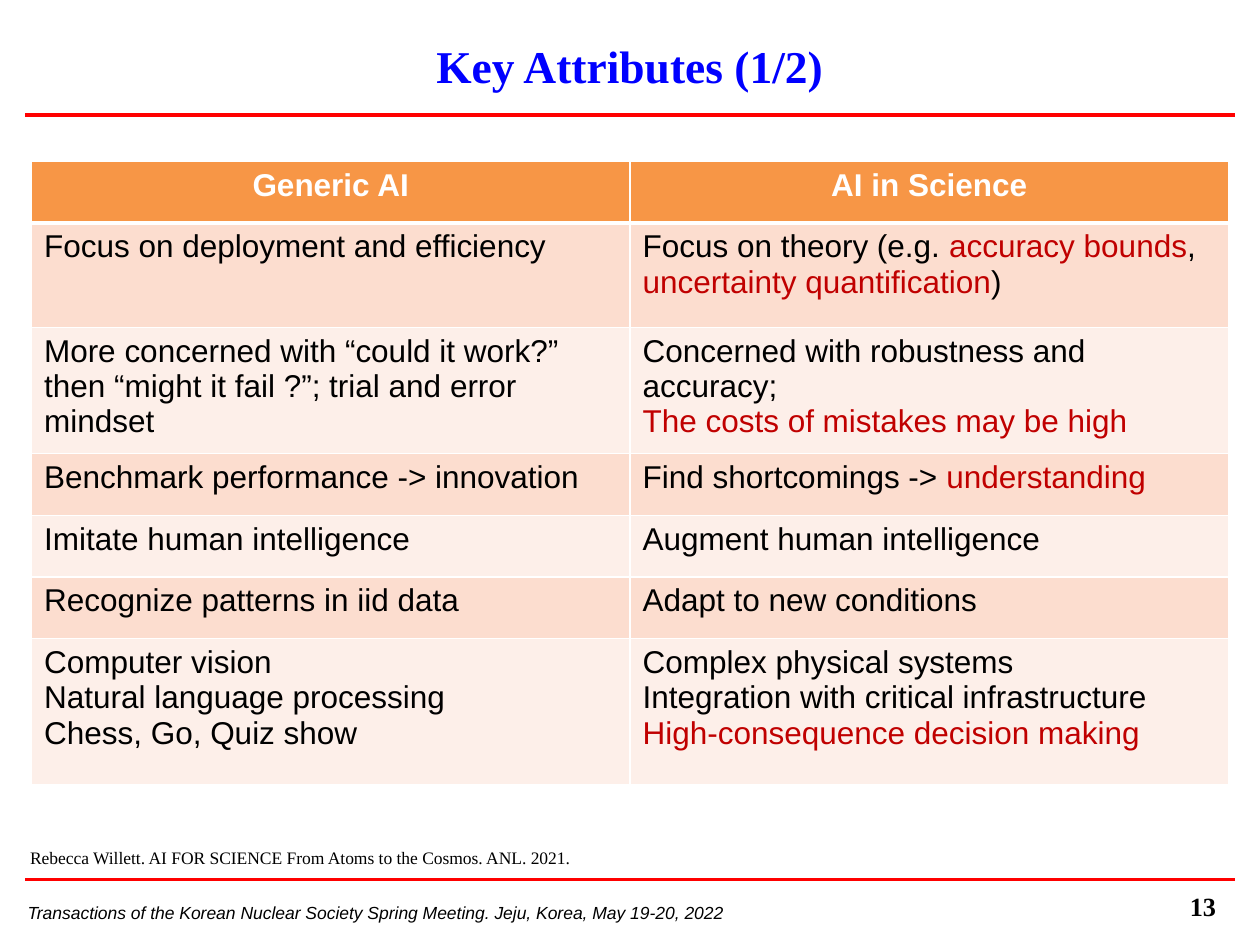
from dataclasses import dataclass

from lxml import etree
from pptx import Presentation
from pptx.dml.color import RGBColor
from pptx.enum.shapes import MSO_CONNECTOR
from pptx.enum.text import MSO_ANCHOR, PP_ALIGN
from pptx.oxml.ns import qn
from pptx.util import Inches, Pt

LEFT, CENTER, RIGHT = PP_ALIGN.LEFT, PP_ALIGN.CENTER, PP_ALIGN.RIGHT
TOP, MIDDLE = MSO_ANCHOR.TOP, MSO_ANCHOR.MIDDLE
STRAIGHT = MSO_CONNECTOR.STRAIGHT


@dataclass(frozen=True)
class Theme:
    serif: str = "Times New Roman"
    sans: str = "Arial"
    ink: str = "000000"
    title: str = "0000FF"
    rule: str = "FF0000"
    accent: str = "C00000"
    white: str = "FFFFFF"
    header: str = "F79646"
    bands: tuple = ("FCDDCF", "FDEFE9")
    title_size: int = 26
    table_size: int = 18
    number_size: int = 15
    small_size: int = 10
    rule_width: float = 2.25


THEME = Theme()
WIDTH, HEIGHT = 10, 7.5
RULE_TOPS = (0.91, 6.98)
RULE_MARGIN = 0.2
TABLE_MARGIN, TABLE_TOP = 0.25, 1.28
ROW_HEIGHTS = (0.49, 0.83, 0.93, 0.49, 0.49, 0.49, 1.16)

TITLE = "Key Attributes (1/2)"
SOURCE = "Rebecca Willett. AI FOR SCIENCE From Atoms to the Cosmos. ANL. 2021."
MEETING = "Transactions of the Korean Nuclear Society Spring Meeting. Jeju, Korea, May 19-20, 2022"
PAGE_NUMBER = "13"
ACCENT_MARK = "|"
HEADINGS = ("Generic AI", "AI in Science")
COMPARISONS = [
    ("Focus on deployment and efficiency",
     "Focus on theory (e.g. |accuracy bounds|, |uncertainty quantification|)"),
    ("More concerned with “could it work?” then “might it fail ?”; trial and error mindset",
     "Concerned with robustness and accuracy;\n|The costs of mistakes may be high|"),
    ("Benchmark performance -> innovation", "Find shortcomings -> |understanding|"),
    ("Imitate human intelligence", "Augment human intelligence"),
    ("Recognize patterns in iid data", "Adapt to new conditions"),
    ("Computer vision\nNatural language processing\nChess, Go, Quiz show",
     "Complex physical systems\nIntegration with critical infrastructure\n"
     "|High-consequence decision making|"),
]


def write(frame, text, size, font=THEME.sans, color=THEME.ink, bold=False,
          italic=False, align=LEFT):
    for index, line in enumerate(text.split("\n")):
        para = frame.add_paragraph() if index else frame.paragraphs[0]
        para.alignment = align
        for position, part in enumerate(line.split(ACCENT_MARK)):
            if not part:
                continue
            span = para.add_run()
            span.text = part
            span.font.name = font
            span.font.size = Pt(size)
            span.font.bold = bold
            span.font.italic = italic
            shade = THEME.accent if position % 2 else color
            span.font.color.rgb = RGBColor.from_string(shade)


def add_text(page, area, text, size, anchor=TOP, **style):
    box = page.shapes.add_textbox(*map(Inches, area))
    box.text_frame.word_wrap = True
    box.text_frame.vertical_anchor = anchor
    write(box.text_frame, text, size, **style)


def add_rule(page, top):
    rule = page.shapes.add_connector(
        STRAIGHT, Inches(RULE_MARGIN), Inches(top),
        Inches(WIDTH - RULE_MARGIN), Inches(top))
    rule.line.color.rgb = RGBColor.from_string(THEME.rule)
    rule.line.width = Pt(THEME.rule_width)
    etree.SubElement(rule._element.spPr, qn("a:effectLst"))


def set_borders(cell, **widths):
    properties = cell._tc.get_or_add_tcPr()
    for index, (side, width) in enumerate(widths.items()):
        border = etree.Element(qn(f"a:{side}"), w=str(Pt(width)))
        fill = etree.SubElement(border, qn("a:solidFill"))
        etree.SubElement(fill, qn("a:srgbClr"), val=THEME.white)
        properties.insert(index, border)


def add_comparison(page):
    rows = [HEADINGS, *COMPARISONS]
    columns = len(HEADINGS)
    table_width = WIDTH - 2 * TABLE_MARGIN
    table = page.shapes.add_table(
        len(rows), columns, Inches(TABLE_MARGIN), Inches(TABLE_TOP),
        Inches(table_width), Inches(sum(ROW_HEIGHTS))).table
    for column in table.columns:
        column.width = Inches(table_width / columns)
    for number, (texts, height) in enumerate(zip(rows, ROW_HEIGHTS)):
        table.rows[number].height = Inches(height)
        heading = number == 0
        fill = THEME.header if heading else THEME.bands[(number - 1) % 2]
        style = dict(color=THEME.white, bold=True, align=CENTER) if heading else {}
        for cell, text in zip(table.rows[number].cells, texts):
            cell.fill.solid()
            cell.fill.fore_color.rgb = RGBColor.from_string(fill)
            set_borders(cell, lnL=1, lnR=1, lnT=3 if number == 1 else 1,
                        lnB=3 if heading else 1)
            write(cell.text_frame, text, THEME.table_size, **style)


def main():
    deck = Presentation()
    deck.slide_width, deck.slide_height = Inches(WIDTH), Inches(HEIGHT)
    page = deck.slides.add_slide(deck.slide_layouts[6])
    for top in RULE_TOPS:
        add_rule(page, top)
    add_text(page, (0.12, 7.11, 9.21, 0.27), MEETING, THEME.small_size, italic=True)
    add_text(page, (0.5, 0.25, 9, 0.53), TITLE, THEME.title_size, anchor=MIDDLE,
             font=THEME.serif, color=THEME.title, bold=True, align=CENTER)
    add_text(page, (7.42, 7.02, 2.33, 0.27), PAGE_NUMBER, THEME.number_size,
             font=THEME.serif, bold=True, align=RIGHT)
    add_comparison(page)
    add_text(page, (0.14, 6.67, 9.72, 0.33), SOURCE, THEME.small_size, font=THEME.serif)
    deck.save("out.pptx")


if __name__ == "__main__":
    main()
